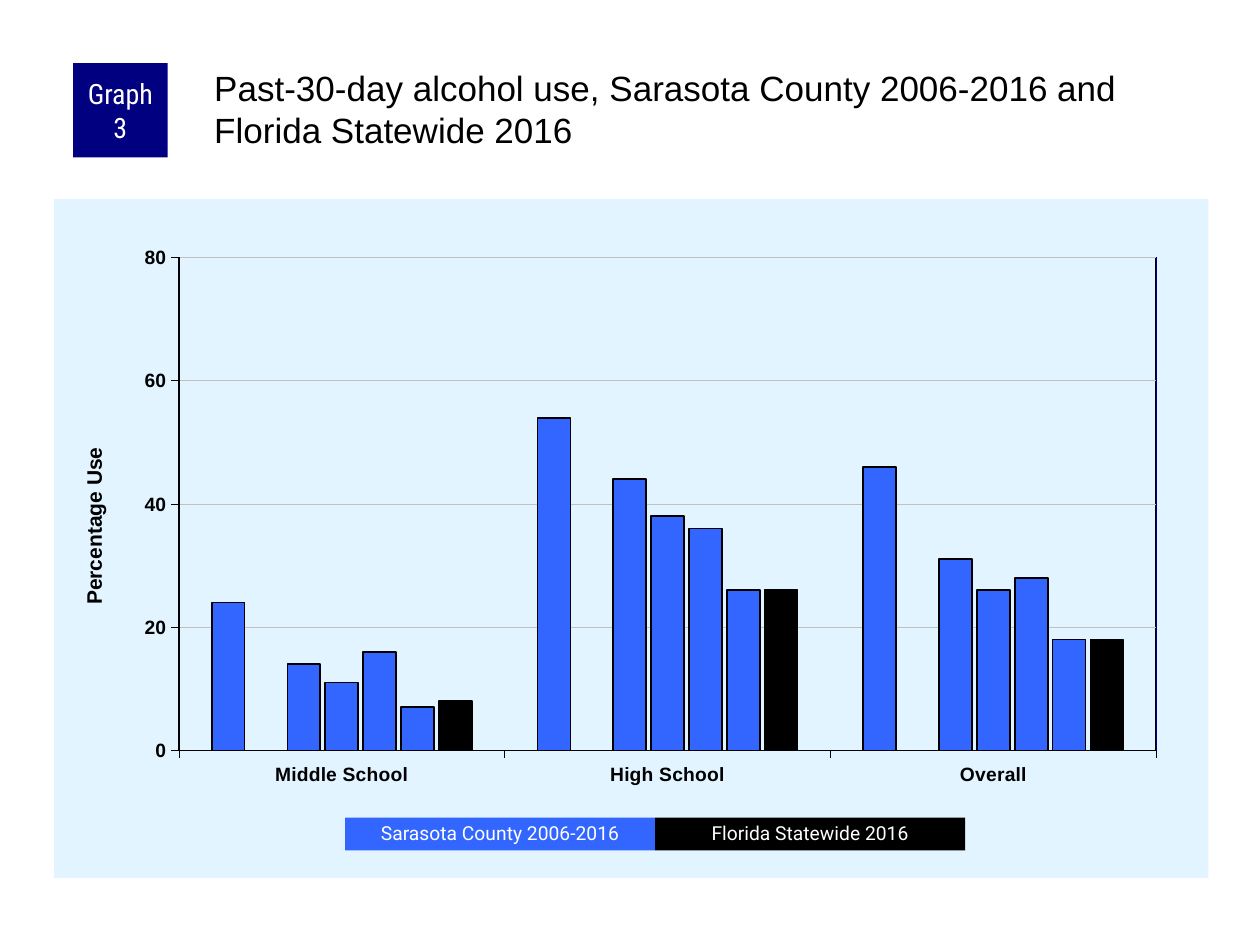
from dataclasses import dataclass

from lxml.etree import SubElement
from pptx import Presentation
from pptx.chart.data import CategoryChartData
from pptx.dml.color import RGBColor
from pptx.enum.chart import XL_CHART_TYPE, XL_TICK_MARK
from pptx.enum.shapes import MSO_CONNECTOR, MSO_SHAPE
from pptx.enum.text import MSO_ANCHOR, PP_ALIGN
from pptx.oxml import parse_xml
from pptx.oxml.ns import nsdecls, qn
from pptx.util import Inches, Pt

COLORS = {"navy": "000080", "blue": "3366FF", "black": "000000",
          "white": "FFFFFF", "panel": "E1F4FF", "grid": "C0C0C0"}
CHART = (0.43, 1.58, 9.16, 5.39)      # left, top, width, height in inches
PLOT = (0.108, 0.086, 0.847, 0.726)   # the same, as shares of the chart
CATEGORIES = ("Middle School", "High School", "Overall")
COUNTY = ((24, 54, 46), (0, 0, 0), (14, 44, 31), (11, 38, 26),
          (16, 36, 28), (7, 26, 18))
STATE = (8, 26, 18)


@dataclass
class Box:
    text: str
    at: tuple[float, float, float, float]
    fill: str
    font: str
    size: float
    inset: float = 0.1
    spacing: float = 1.0


LEGEND_LEFT, LEGEND_WIDTH = 2.74, 2.46
BOXES = [Box("Graph 3", (0.58, 0.5, 0.75, 0.75), "navy",
             "Roboto Condensed", 16, inset=0.05)]
BOXES += [Box(text, (LEGEND_LEFT + i * LEGEND_WIDTH, 6.49, LEGEND_WIDTH, 0.26),
              fill, "Roboto", 11, spacing=0.9)
          for i, (text, fill) in enumerate((("Sarasota County 2006-2016", "blue"),
                                            ("Florida Statewide 2016", "black")))]


def rgb(name: str) -> RGBColor:
    return RGBColor.from_string(COLORS[name])


def style_font(font, name: str, size: float, color: str, bold: bool = False) -> None:
    font.name, font.size, font.bold = name, Pt(size), bold
    font.color.rgb = rgb(color)


def style_line(line, color: str, width: float) -> None:
    line.color.rgb = rgb(color)
    line.width = Pt(width)


def manual_layout(**values: float):
    """Layout element with places given as shares of the chart."""
    layout = parse_xml(f'<c:layout {nsdecls("c")}><c:manualLayout/></c:layout>')
    if "w" in values:
        SubElement(layout[0], qn("c:layoutTarget")).set("val", "inner")
    for axis in "xy":
        SubElement(layout[0], qn(f"c:{axis}Mode")).set("val", "edge")
    for key, value in values.items():
        SubElement(layout[0], qn(f"c:{key}")).set("val", str(value))
    return layout


def set_layout(parent, index: int, **values: float) -> None:
    for old in parent.findall(qn("c:layout")):
        parent.remove(old)
    parent.insert(index, manual_layout(**values))


def area_format(fill: str, line: str):
    return parse_xml(f'<c:spPr {nsdecls("c", "a")}>{fill}{line}</c:spPr>')


def solid(color: str) -> str:
    return f'<a:solidFill><a:srgbClr val="{COLORS[color]}"/></a:solidFill>'


def add_use_chart(s) -> None:
    data = CategoryChartData(number_format="0")
    data.categories = CATEGORIES
    for i, values in enumerate((*COUNTY, STATE), 1):
        data.add_series(f"Series {i}", values)
    chart = s.shapes.add_chart(XL_CHART_TYPE.COLUMN_CLUSTERED,
                               *map(Inches, CHART), data).chart
    chart.has_legend = chart.has_title = False
    style_font(chart.font, "Arial", 8, "black")

    # Columns
    plot = chart.plots[0]
    plot.gap_width, plot.overlap, plot.vary_by_categories = 200, -15, False
    for i, series in enumerate(plot.series):
        series.format.fill.solid()
        series.format.fill.fore_color.rgb = rgb("blue" if i < len(COUNTY) else "black")
        style_line(series.format.line, "black", 1)

    # Axes
    for axis in (chart.category_axis, chart.value_axis):
        axis.major_tick_mark = XL_TICK_MARK.OUTSIDE
        axis.minor_tick_mark = XL_TICK_MARK.NONE
        style_font(axis.tick_labels.font, "Arial", 11, "black", True)
        style_line(axis.format.line, "black", 0.25)
    axis = chart.value_axis
    axis.minimum_scale, axis.maximum_scale, axis.major_unit = 0, 80, 20
    style_line(axis.major_gridlines.format.line, "grid", 0.25)
    title = axis.axis_title
    r = title.text_frame.paragraphs[0].add_run()
    r.text = "Percentage Use"
    style_font(r.font, "Arial", 12, "black", True)
    set_layout(title._element, 1, x=0.02, y=0.36)

    # Panel, plot frame and plot position
    space = chart._chartSpace
    space.find(qn("c:chart")).addnext(
        area_format(solid("panel"), "<a:ln><a:noFill/></a:ln>"))
    area = space.find(qn("c:chart")).find(qn("c:plotArea"))
    set_layout(area, 0, **dict(zip("xywh", PLOT)))
    area.append(area_format("<a:noFill/>", f'<a:ln w="12700">{solid("black")}</a:ln>'))


def add_right_edge(s) -> None:
    left, top, width, height = CHART
    x = left + (PLOT[0] + PLOT[2]) * width
    y = top + PLOT[1] * height
    edge = s.shapes.add_connector(MSO_CONNECTOR.STRAIGHT, Inches(x), Inches(y),
                                  Inches(x), Inches(y + PLOT[3] * height))
    style_line(edge.line, "navy", 1)
    SubElement(edge._element.spPr, qn("a:effectLst"))


def add_box(s, box: Box) -> None:
    sp = s.shapes.add_shape(MSO_SHAPE.RECTANGLE, *map(Inches, box.at))
    sp.shadow.inherit = False
    sp.fill.solid()
    sp.fill.fore_color.rgb = rgb(box.fill)
    sp.line.fill.background()
    tf = sp.text_frame
    tf.word_wrap, tf.vertical_anchor = True, MSO_ANCHOR.MIDDLE
    tf.margin_left = tf.margin_right = Inches(box.inset)
    tf.margin_top = tf.margin_bottom = 0
    p = tf.paragraphs[0]
    p.alignment, p.line_spacing = PP_ALIGN.CENTER, box.spacing
    r = p.add_run()
    r.text = box.text
    style_font(r.font, box.font, box.size, "white")


def add_heading(s, text: str) -> None:
    tf = s.shapes.add_textbox(*map(Inches, (1.67, 0.5, 7.92, 0.83))).text_frame
    tf.word_wrap = True
    tf.margin_left = tf.margin_top = Inches(0.03)
    tf.margin_right = tf.margin_bottom = 0
    r = tf.paragraphs[0].add_run()
    r.text = text
    style_font(r.font, "Arial", 20, "black")


def main() -> None:
    prs = Presentation()
    prs.slide_width, prs.slide_height = Inches(10), Inches(7.5)
    s = prs.slides.add_slide(prs.slide_layouts[6])
    add_use_chart(s)
    add_right_edge(s)
    add_heading(s, "Past-30-day alcohol use, Sarasota County 2006-2016 "
                   "and Florida Statewide 2016")
    for box in BOXES:
        add_box(s, box)
    prs.save("out.pptx")


if __name__ == "__main__":
    main()
